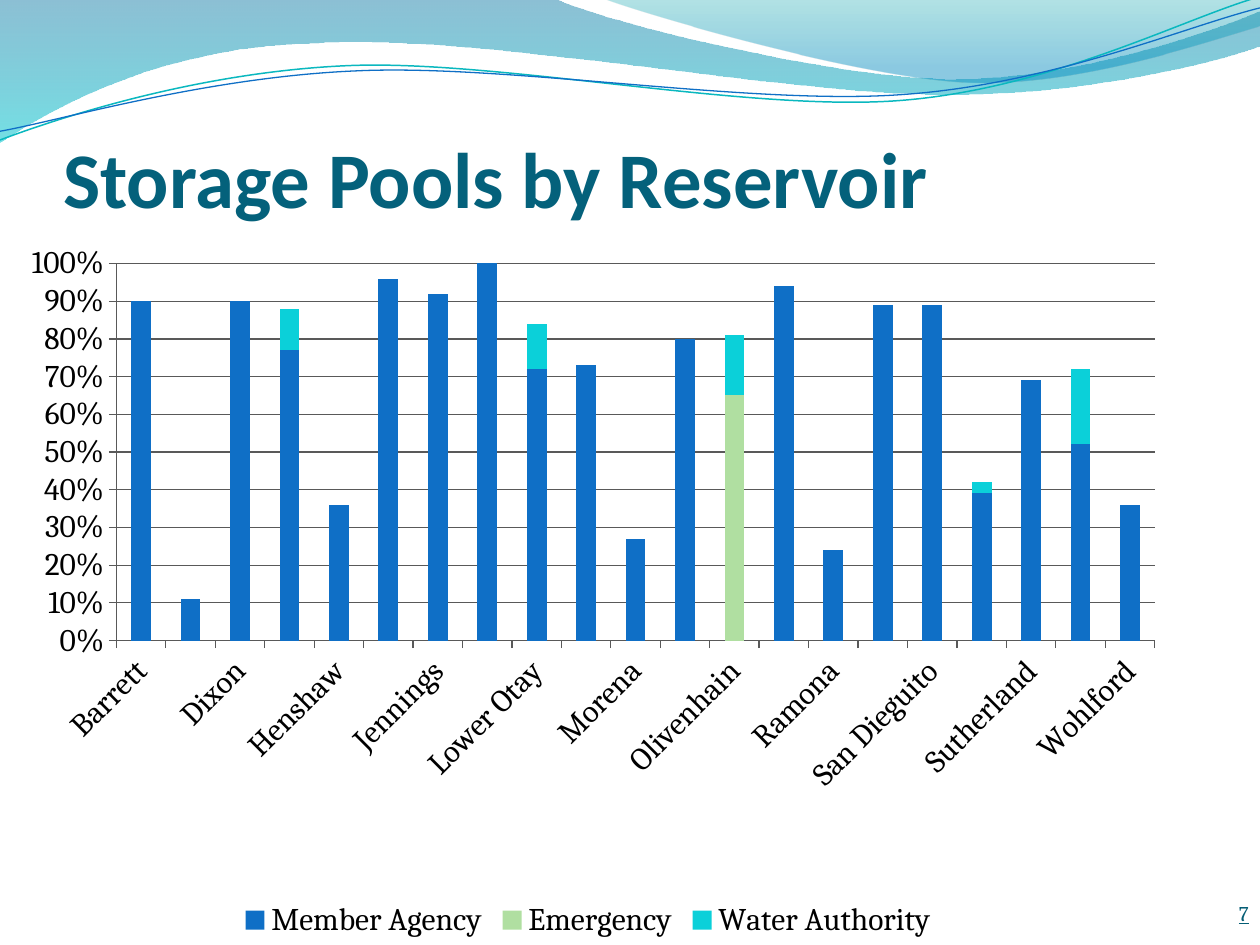
import pptx
import pptx.chart.data
import pptx.dml.color
import pptx.enum.chart
import pptx.enum.text
import pptx.oxml
import pptx.util
from dataclasses import dataclass
from pptx.oxml.ns import nsdecls, qn

Pt = pptx.util.Pt


@dataclass(frozen=True)
class Theme:
    title_font: str = "Calibri"
    body_font: str = "Cambria"
    title_size: float = 45
    chart_size: float = 18
    number_size: float = 12
    title: str = "04617B"
    number: str = "045D75"
    text: str = "000000"
    axis: str = "595959"
    member: str = "0F6FC6"
    emergency: str = "B0DFA1"
    authority: str = "0BD0D9"
    teal_line: str = "0AB8BF"
    wide_wave: tuple = ((0, "0074A1", 45), (1, "00C6CF", 55))
    right_wave: tuple = ((0, "00A1A9", 30), (0.8, "008BBF", 45))


THEME = Theme()
UNITS_PER_POINT = 100

WIDE_WAVE = [
    [(-0.5, -0.5)], [(317, -0.7)],
    [(343, 12), (478, 45), (546, 45)], [(614, 45), (690, 19), (720, 6.5)],
    [(721, 26)],
    [(708, 32), (626, 55), (537, 54)], [(448, 54), (275, 20), (185, 24.5)],
    [(93, 26), (33, 60), (-0.5, 81.5)],
]
RIGHT_WAVE = [
    [(345, -0.5)],
    [(366.5, 8), (491, 44.5), (553.5, 47)], [(616.5, 49.5), (692, 23), (720, 15)],
    [(720, 0)],
]
TEAL_CURVE = [
    [(0, 80)],
    [(34.5, 67), (114, 41), (199.5, 37.5)], [(284.5, 34), (427, 64), (513.5, 57.5)],
    [(600, 51), (675.5, 11), (718.5, -1.5)],
]
BLUE_CURVE = [
    [(0, 75)],
    [(34, 69), (118, 44), (204, 40.5)], [(290, 36.5), (430, 60.5), (516, 54)],
    [(602, 48), (677.5, 15), (720, 4.5)],
]

MEMBER_SHARES = {
    "Barrett": 0.9, "Cuyamaca": 0.11, "Dixon": 0.9, "El Capitan": 0.77,
    "Henshaw": 0.36, "Hodges": 0.96, "Jennings": 0.92, "Loveland": 1,
    "Lower Otay": 0.72, "Miramar": 0.73, "Morena": 0.27, "Murray": 0.8,
    "Olivenhain": 0, "Poway": 0.94, "Ramona": 0.24, "Red Mountain": 0.89,
    "San Dieguito": 0.89, "San Vicente": 0.39, "Sutherland": 0.69,
    "Sweetwater": 0.52, "Wohlford": 0.36,
}
EMERGENCY_SHARES = {"Olivenhain": 0.65}
AUTHORITY_SHARES = {
    "El Capitan": 0.11, "Lower Otay": 0.12, "Olivenhain": 0.16,
    "San Vicente": 0.03, "Sweetwater": 0.2,
}
SERIES = [
    ("Member Agency", MEMBER_SHARES, THEME.member),
    ("Emergency", EMERGENCY_SHARES, THEME.emergency),
    ("Water Authority", AUTHORITY_SHARES, THEME.authority),
]


def color(value):
    return pptx.dml.color.RGBColor.from_string(value)


def bend_segments(shape, segments, left, top):
    lines = list(shape._element.iter(qn("a:lnTo")))
    for line, segment in zip(lines, segments):
        if len(segment) == 3:
            points = "".join(
                f'<a:pt x="{round((x - left) * UNITS_PER_POINT)}"'
                f' y="{round((y - top) * UNITS_PER_POINT)}"/>' for x, y in segment)
            curve = pptx.oxml.parse_xml(
                f'<a:cubicBezTo {nsdecls("a")}>{points}</a:cubicBezTo>')
            line.getparent().replace(line, curve)


def add_outline(slide, segments, close):
    anchors = [segment[-1] for segment in segments]
    units = [(x * UNITS_PER_POINT, y * UNITS_PER_POINT) for x, y in anchors]
    builder = slide.shapes.build_freeform(*units[0], scale=Pt(1) / UNITS_PER_POINT)
    builder.add_line_segments(units[1:], close=close)
    shape = builder.convert_to_shape()
    shape.shadow.inherit = False
    left, top = (min(values) for values in zip(*anchors))
    bend_segments(shape, segments[1:], left, top)
    return shape


def add_wave(slide, segments, stops):
    shape = add_outline(slide, segments, close=True)
    shape.line.fill.background()
    shape.fill.gradient()
    shape.fill.gradient_angle = 270
    for stop, (position, value, _) in zip(shape.fill.gradient_stops, stops):
        stop.position = position
        stop.color.rgb = color(value)
    for element, (_, _, opacity) in zip(shape._element.iter(qn("a:srgbClr")), stops):
        element.append(pptx.oxml.parse_xml(
            f'<a:alpha {nsdecls("a")} val="{opacity * 1000}"/>'))


def add_curve(slide, segments, value, width):
    shape = add_outline(slide, segments, close=False)
    shape.fill.background()
    shape.line.color.rgb = color(value)
    shape.line.width = Pt(width)


def add_text(slide, box, text, font_name, size, value, top_inset=0):
    shape = slide.shapes.add_textbox(*map(Pt, box))
    frame = shape.text_frame
    frame.word_wrap = True
    frame.vertical_anchor = pptx.enum.text.MSO_ANCHOR.BOTTOM
    frame.margin_left = frame.margin_right = frame.margin_bottom = 0
    frame.margin_top = Pt(top_inset)
    paragraph = frame.paragraphs[0]
    paragraph.text = text
    paragraph.font.name = font_name
    paragraph.font.size = Pt(size)
    paragraph.font.color.rgb = color(value)
    return paragraph


def set_plot_layout(chart, x, y, width, height):
    plot_area = chart._chartSpace.chart.plotArea
    for layout in plot_area.findall(qn("c:layout")):
        plot_area.remove(layout)
    values = "".join(f'<c:{name} val="{value}"/>' for name, value in (
        ("layoutTarget", "inner"), ("xMode", "edge"), ("yMode", "edge"),
        ("x", x), ("y", y), ("w", width), ("h", height)))
    plot_area.insert(0, pptx.oxml.parse_xml(
        f'<c:layout {nsdecls("c")}><c:manualLayout>{values}</c:manualLayout></c:layout>'))


def style_axis(axis):
    axis.major_tick_mark = pptx.enum.chart.XL_TICK_MARK.OUTSIDE
    axis.minor_tick_mark = pptx.enum.chart.XL_TICK_MARK.NONE
    axis.format.line.color.rgb = color(THEME.axis)
    axis.format.line.width = Pt(0.75)


def add_storage_chart(slide):
    data = pptx.chart.data.CategoryChartData(number_format="0%")
    data.categories = list(MEMBER_SHARES)
    for name, shares, _ in SERIES:
        data.add_series(name, [shares.get(reservoir) for reservoir in MEMBER_SHARES])
    chart = slide.shapes.add_chart(
        pptx.enum.chart.XL_CHART_TYPE.COLUMN_STACKED,
        Pt(0), Pt(135.6), Pt(672), Pt(404.4), data).chart
    chart.has_title = False
    chart.font.name = THEME.body_font
    chart.font.size = Pt(THEME.chart_size)
    chart.font.color.rgb = color(THEME.text)
    chart.has_legend = True
    chart.legend.position = pptx.enum.chart.XL_LEGEND_POSITION.BOTTOM
    chart.legend.include_in_layout = False
    plot = chart.plots[0]
    plot.vary_by_categories = False
    plot.gap_width = 150
    plot.overlap = 100
    for series, (_, _, value) in zip(plot.series, SERIES):
        series.format.fill.solid()
        series.format.fill.fore_color.rgb = color(value)
    value_axis, category_axis = chart.value_axis, chart.category_axis
    style_axis(value_axis)
    style_axis(category_axis)
    value_axis.maximum_scale = 1
    value_axis.tick_labels.number_format = "0%"
    value_axis.tick_labels.number_format_is_linked = False
    value_axis.has_major_gridlines = True
    value_axis.major_gridlines.format.line.color.rgb = color(THEME.axis)
    value_axis.major_gridlines.format.line.width = Pt(0.75)
    category_axis.tick_labels.font.size = Pt(THEME.chart_size)
    category_axis._element.find(f'{qn("c:txPr")}/{qn("a:bodyPr")}').set("rot", "-2700000")
    set_plot_layout(chart, 0.099, 0.037, 0.883, 0.533)


def main():
    presentation = pptx.Presentation()
    presentation.slide_width, presentation.slide_height = Pt(720), Pt(540)
    slide = presentation.slides.add_slide(presentation.slide_layouts[6])
    add_wave(slide, WIDE_WAVE, THEME.wide_wave)
    add_wave(slide, RIGHT_WAVE, THEME.right_wave)
    add_curve(slide, TEAL_CURVE, THEME.teal_line, 0.85)
    add_curve(slide, BLUE_CURVE, THEME.member, 0.75)
    title = add_text(slide, (36, 72, 594, 56), "Storage Pools by Reservoir",
                     THEME.title_font, THEME.title_size, THEME.title, top_inset=3.6)
    title.font.bold = True
    add_storage_chart(slide)
    number = add_text(slide, (654, 500.5, 59.5, 28.5), "7",
                      THEME.body_font, THEME.number_size, THEME.number)
    number.alignment = pptx.enum.text.PP_ALIGN.RIGHT
    number.font.underline = True
    presentation.save("out.pptx")


if __name__ == "__main__":
    main()
